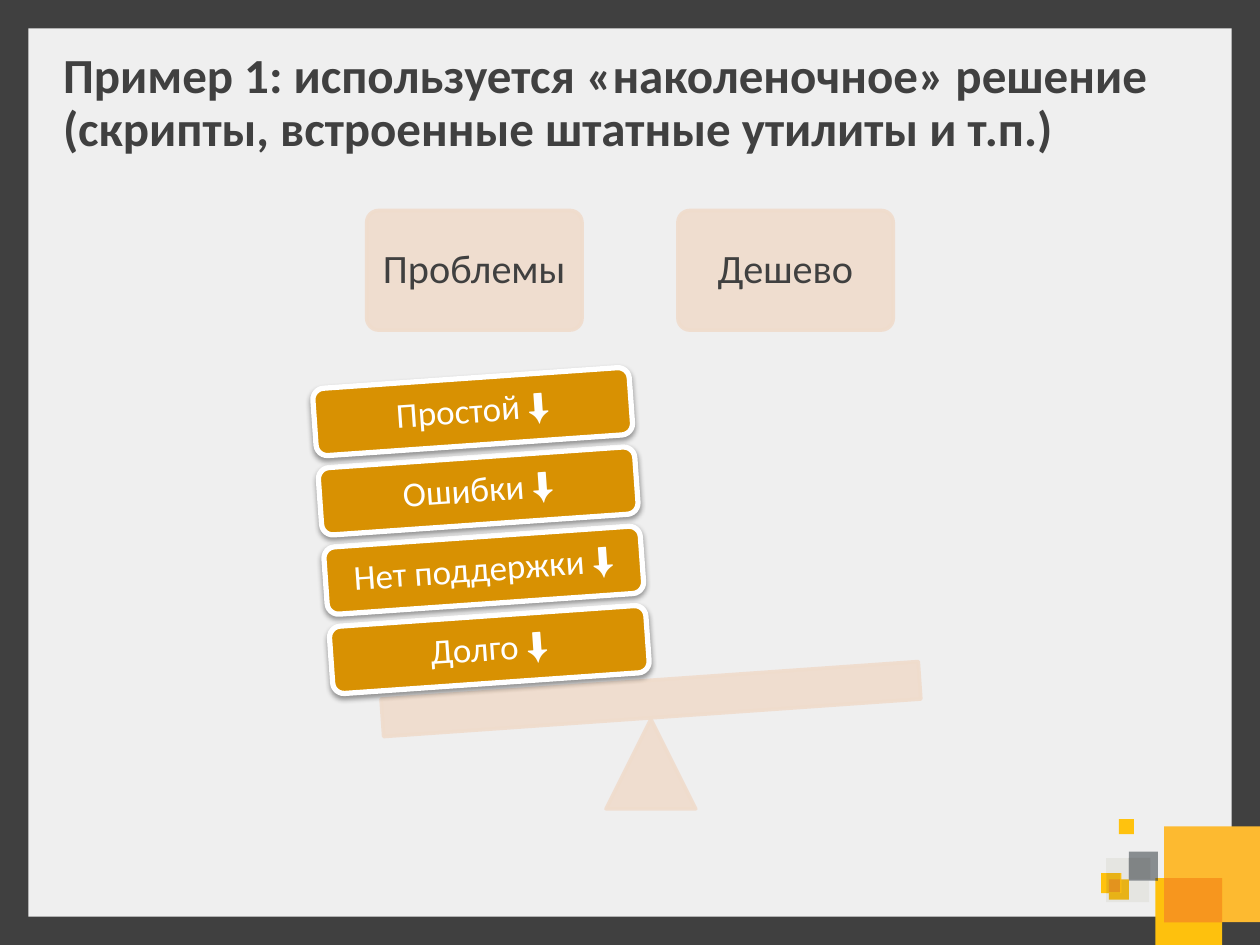
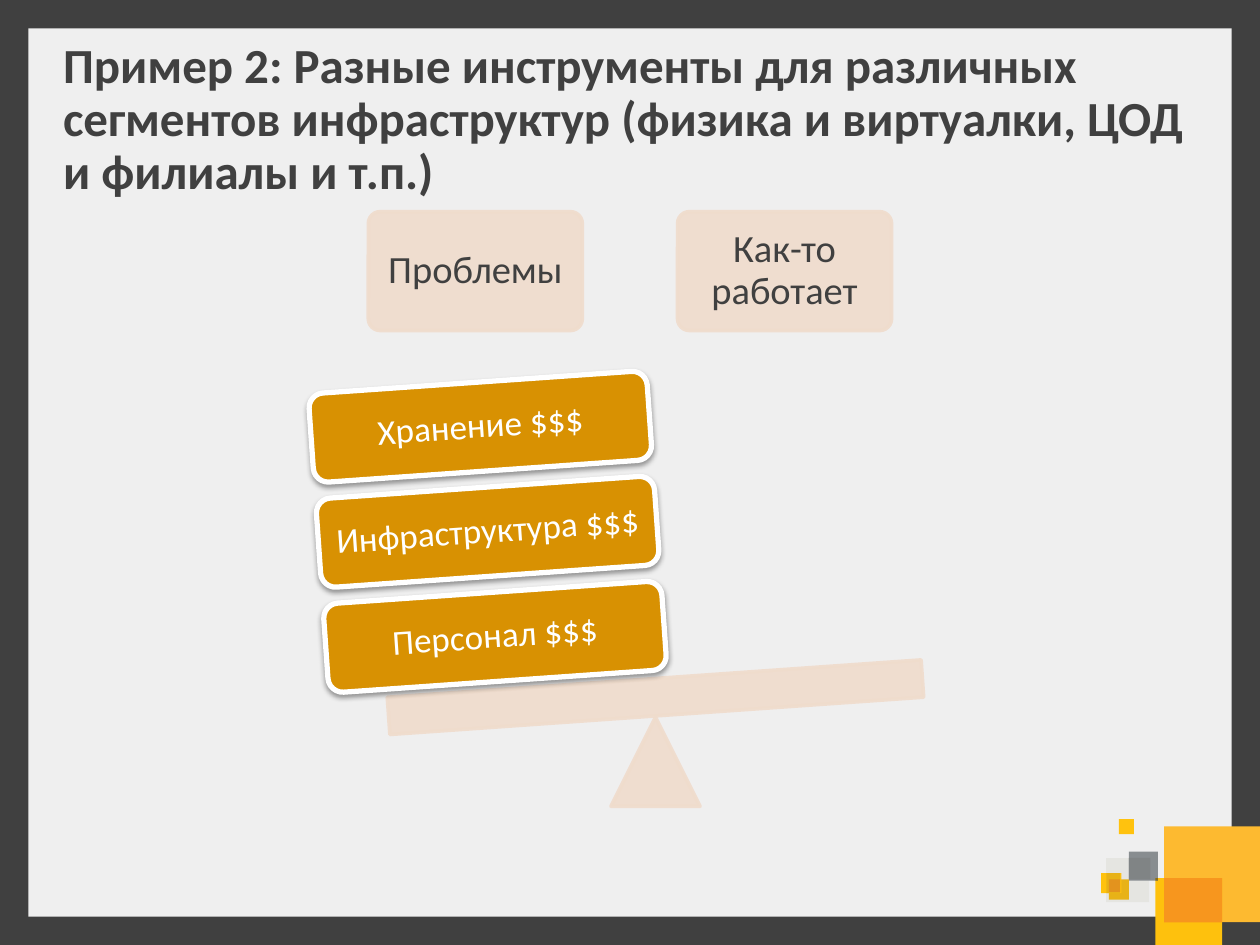
from dataclasses import dataclass
from math import radians, tan

from lxml.etree import SubElement
from pptx import Presentation
from pptx.dml.color import RGBColor as Rgb
from pptx.enum.shapes import MSO_SHAPE as Kind
from pptx.enum.text import MSO_ANCHOR as Anchor, MSO_AUTO_SIZE as Fit, PP_ALIGN as Align
from pptx.oxml.ns import qn
from pptx.util import Inches, Pt

WIDE, HIGH = 10, 7.5
TILT = 4
ARROW = "⬇"


@dataclass(frozen=True)
class Theme:
    back: str = "EFEFEF"
    dark: str = "404040"
    pale: str = "F0DCCC"
    card: str = "D89102"
    white: str = "FFFFFF"
    font: str = "Calibri"
    sign: str = "Arial"
    title: int = 28
    label: int = 20
    lead: float = 0.9


@dataclass(frozen=True)
class Box:
    left: float
    top: float
    unit: float

    def place(self, x, y, w, h):
        u = self.unit
        return [Inches(v) for v in (self.left + x * u, self.top + y * u, w * u, h * u)]


LOOK = Theme()
PAGE = Box(0, 0, HIGH)
CORNER = Box(0.874 * WIDE, HIGH - 1, 1)

TILES = [
    (0.04, 0.31, 0.34, 0.35, "E5E5E1"),
    (0.50, 0.06, 0.76, 0.76, "FDBA30"),
    (0.43, 0.47, 0.53, 0.53, "FEC10D"),
    (0.50, 0.47, 0.46, 0.35, "F7961E"),
    (0.22, 0.26, 0.23, 0.23, "888D90"),
    (0.43, 0.47, 0.02, 0.02, "8B6E18"),
    (0.22, 0.31, 0.17, 0.17, "808485"),
    (0.06, 0.48, 0.16, 0.16, "E8B217"),
    (0.00, 0.43, 0.16, 0.16, "FFC20E"),
    (0.04, 0.43, 0.11, 0.16, "E8B217"),
    (0.06, 0.48, 0.09, 0.10, "E3931E"),
    (0.14, 0.00, 0.12, 0.12, "FFC20E"),
]

SLIDES = [
    dict(
        title="Пример 1: используется «наколеночное» решение "
              "(скрипты, встроенные штатные утилиты и т.п.)",
        top=0.33,
        box=Box(WIDE / 2, 1.67, 4.75),
        heads=["Проблемы", "Дешево"],
        size=23,
        cards=["Долго ⬇", "Нет поддержки ⬇", "Ошибки ⬇", "Простой ⬇"],
        width=0.53,
        pivot=0.035,
    ),
    dict(
        title="Пример 2: Разные инструменты для различных сегментов "
              "инфраструктур (физика и виртуалки, ЦОД и филиалы и т.п.)",
        top=0.67,
        box=Box(WIDE / 2, 1.68, 4.72),
        heads=["Проблемы", "Как-то работает"],
        size=22,
        cards=["Персонал $$$", "Инфраструктура $$$", "Хранение $$$"],
        width=0.57,
        pivot=0.043,
    ),
]


def color(code):
    return Rgb.from_string(code)


def style(para, size, code, bold=False):
    para.line_spacing = LOOK.lead
    font = para.font
    font.name, font.size, font.bold = LOOK.font, Pt(size), bold
    font.color.rgb = color(code)


def draw(slide, kind, place, fill, line=None, weight=2):
    shape = slide.shapes.add_shape(kind, *place)
    shape.shadow.inherit = False
    shape.fill.solid()
    shape.fill.fore_color.rgb = color(fill)
    if line:
        shape.line.color.rgb = color(line)
        shape.line.width = Pt(weight)
    else:
        shape.line.fill.background()
    return shape


def draw_pale(slide, kind, place):
    shape = draw(slide, kind, place, LOOK.pale, LOOK.pale)
    for node in shape.element.spPr.iter(qn("a:srgbClr")):
        SubElement(node, qn("a:alpha"), val="90000")
    return shape


def shade(shape):
    effect = shape.element.spPr.find(qn("a:effectLst"))
    outer = SubElement(effect, qn("a:outerShdw"), blurRad=str(Pt(3.1)),
                       dist=str(Pt(1.6)), dir="5400000", rotWithShape="0")
    tone = SubElement(outer, qn("a:srgbClr"), val="000000")
    SubElement(tone, qn("a:alpha"), val="38000")


def write(shape, text, size, code):
    frame = shape.text_frame
    frame.word_wrap = True
    frame.vertical_anchor = Anchor.MIDDLE
    frame.margin_left = frame.margin_right = Inches(0.07)
    frame.margin_top = frame.margin_bottom = Inches(0.07)
    para = frame.paragraphs[0]
    para.alignment = Align.CENTER
    style(para, size, code)
    for piece in filter(None, text.partition(ARROW)):
        run = para.add_run()
        run.text = piece
        if piece == ARROW:
            run.font.name = LOOK.sign


def dress(layout, slide):
    layout.background.fill.solid()
    layout.background.fill.fore_color.rgb = color(LOOK.back)
    wide, band = WIDE / HIGH, 0.03
    bands = [(0, 0, band, 1), (wide - band, 0, band, 1),
             (0, 0, wide, band), (0, 1 - band, wide, band)]
    parts = [draw(slide, Kind.RECTANGLE, PAGE.place(*area), LOOK.dark) for area in bands]
    parts += [draw(slide, Kind.RECTANGLE, CORNER.place(*area), code) for *area, code in TILES]
    for step, shape in enumerate(parts):
        shape.element.nvSpPr.cNvPr.id = 100 + step
        layout.shapes.element.insert(2 + step, shape.element)


def add_title(slide, text, top):
    title = slide.shapes.title
    title.left, title.top = Inches(0.05 * WIDE), Inches(top)
    title.width, title.height = Inches(0.9 * WIDE), Inches(0.92)
    frame = title.text_frame
    frame.text = text
    frame.word_wrap = True
    frame.auto_size = Fit.NONE
    frame.vertical_anchor = Anchor.BOTTOM
    frame.margin_left = frame.margin_right = frame.margin_top = frame.margin_bottom = 0
    para = frame.paragraphs[0]
    para.alignment = Align.LEFT
    style(para, LOOK.title, LOOK.dark, True)


def add_heads(slide, box, heads, size):
    for side, text in zip((-1, 1), heads):
        shape = draw_pale(slide, Kind.ROUNDED_RECTANGLE,
                          box.place(side * 0.26 - 0.18, 0, 0.36, 0.2))
        shape.adjustments[0] = 0.1
        write(shape, text, size, LOOK.dark)


def add_scale(slide, box, pivot):
    draw_pale(slide, Kind.ISOSCELES_TRIANGLE, box.place(pivot - 0.075, 0.85, 0.15, 0.15))
    beam = draw_pale(slide, Kind.RECTANGLE, box.place(pivot - 0.45, 0.785, 0.9, 0.063))
    beam.rotation = -TILT


def add_cards(slide, box, cards, width, pivot):
    step = 0.53 / len(cards)
    height = 0.85 * step
    for row, text in enumerate(cards):
        rise = row * step
        left = pivot - 0.27 - width / 2 - rise * tan(radians(TILT))
        place = box.place(left, 0.79 - height - rise, width, height)
        card = draw(slide, Kind.ROUNDED_RECTANGLE, place, LOOK.card, LOOK.white, 3)
        card.rotation = -TILT
        shade(card)
        write(card, text, LOOK.label, LOOK.white)


def add_slide(slide, title, top, box, heads, size, cards, width, pivot):
    add_title(slide, title, top)
    add_heads(slide, box, heads, size)
    add_scale(slide, box, pivot)
    add_cards(slide, box, cards, width, pivot)


def main():
    deck = Presentation()
    deck.slide_width, deck.slide_height = Inches(WIDE), Inches(HIGH)
    layout = deck.slide_layouts[5]
    pages = [deck.slides.add_slide(layout) for _ in SLIDES]
    dress(layout, pages[0])
    for page, data in zip(pages, SLIDES):
        add_slide(page, **data)
    deck.save("out.pptx")


if __name__ == "__main__":
    main()
